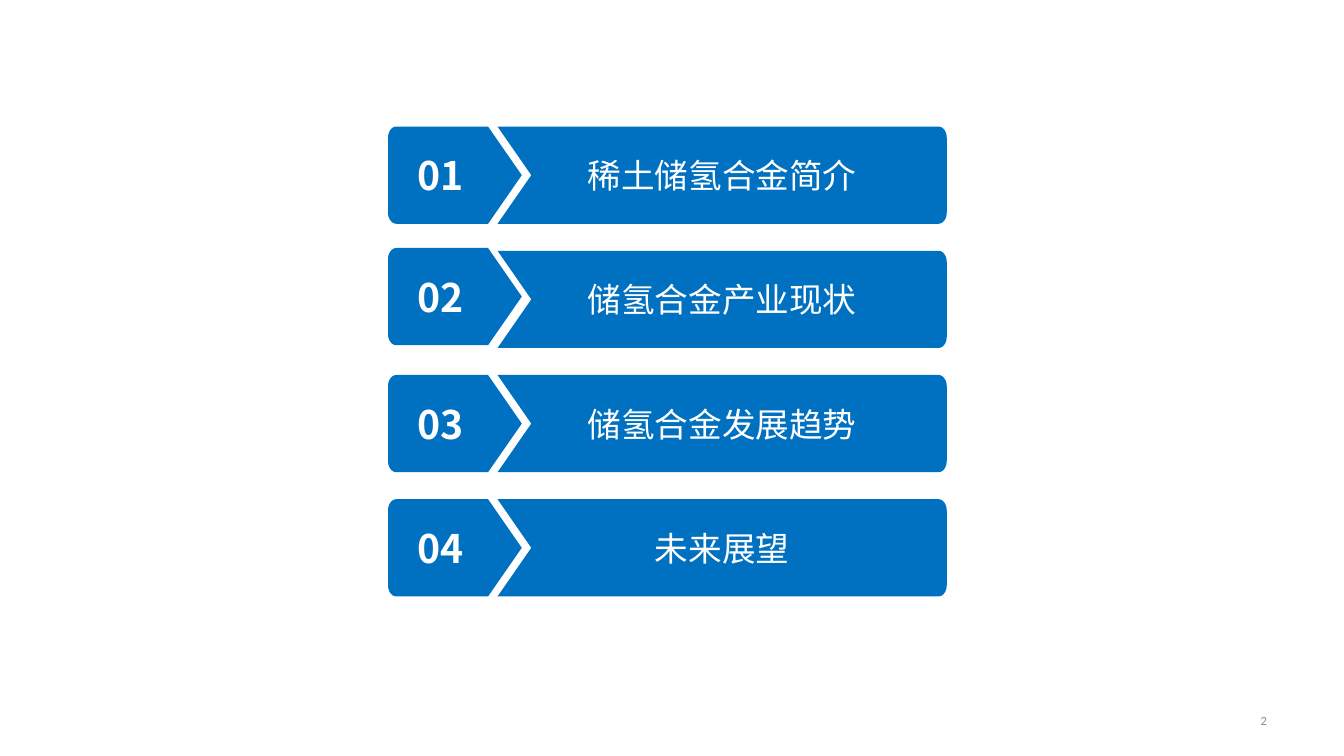
from dataclasses import dataclass
from math import cos, radians, sin

from lxml import etree
from pptx import Presentation
from pptx.dml.color import RGBColor
from pptx.enum.text import MSO_ANCHOR, PP_ALIGN
from pptx.oxml.ns import qn
from pptx.util import Cm, Pt

MIDDLE = MSO_ANCHOR.MIDDLE
CENTER = PP_ALIGN.CENTER
RIGHT = PP_ALIGN.RIGHT


@dataclass(frozen=True)
class Theme:
    """Colours, fonts and type sizes of the agenda."""
    blue: RGBColor = RGBColor(0x00, 0x70, 0xC0)
    white: RGBColor = RGBColor(0xFF, 0xFF, 0xFF)
    grey: RGBColor = RGBColor(0x8C, 0x8C, 0x8C)
    font: str = "Noto Sans CJK SC"
    number_font: str = "Calibri"
    badge_size: int = 28
    title_size: int = 24
    page_size: int = 9


BADGE_LEFT, BADGE_SHOULDER, BADGE_TIP = 9.78, 12.3, 13.15
BANNER_LEFT, BANNER_NOTCH, BANNER_RIGHT = 12.54, 13.39, 23.86
ROW_TOP, ROW_PITCH, ROW_HEIGHT = 3.19, 3.13, 2.45
CORNER_WIDTH, CORNER_HEIGHT = 0.21, 0.28
BADGE_LIFTS = {2: 0.07}
TITLES = ["稀土储氢合金简介", "储氢合金产业现状", "储氢合金发展趋势", "未来展望"]


def corner(center_x, center_y, start):
    """Return the points of a quarter ellipse, clockwise from the start angle."""
    angles = [radians(start + step) for step in range(0, 91, 10)]
    return [(center_x + CORNER_WIDTH * cos(angle), center_y + CORNER_HEIGHT * sin(angle))
            for angle in angles]


class AgendaSlide:
    """Draws agenda elements on one slide in one theme."""

    def __init__(self, slide, theme):
        self.slide = slide
        self.theme = theme

    def add_label(self, shape, text, size, color, font, align, bold=False):
        """Put one run of text, centred vertically, into a shape."""
        frame = shape.text_frame
        frame.word_wrap = True
        frame.vertical_anchor = MIDDLE
        paragraph = frame.paragraphs[0]
        paragraph.alignment = align
        run = paragraph.add_run()
        run.text = text
        run.font.size = Pt(size)
        run.font.bold = bold
        run.font.color.rgb = color
        run.font.name = font
        east_asian = etree.SubElement(run.font._element, qn("a:ea"))
        east_asian.set("typeface", font)

    def outline(self, points, text, size, right_inset, bold=False):
        """Draw a filled outline with a white label."""
        start, *others = [(Cm(x), Cm(y)) for x, y in points]
        builder = self.slide.shapes.build_freeform(*start)
        builder.add_line_segments(others, close=True)
        shape = builder.convert_to_shape()
        shape.shadow.inherit = False
        shape.fill.solid()
        shape.fill.fore_color.rgb = self.theme.blue
        shape.line.fill.background()
        frame = shape.text_frame
        frame.margin_left, frame.margin_right = Cm(0.3), Cm(right_inset)
        frame.margin_top = frame.margin_bottom = Cm(0.15)
        self.add_label(shape, text, size, self.theme.white, self.theme.font, CENTER, bold)

    def banner(self, top, title):
        """Draw a notched title bar with rounded right corners."""
        bottom = top + ROW_HEIGHT
        center_x = BANNER_RIGHT - CORNER_WIDTH
        points = [(BANNER_LEFT, top),
                  *corner(center_x, top + CORNER_HEIGHT, 270),
                  *corner(center_x, bottom - CORNER_HEIGHT, 0),
                  (BANNER_LEFT, bottom),
                  (BANNER_NOTCH, top + ROW_HEIGHT / 2)]
        self.outline(points, title, self.theme.title_size, 0.3)

    def badge(self, top, number):
        """Draw a pointed number badge with rounded left corners."""
        bottom = top + ROW_HEIGHT
        center_x = BADGE_LEFT + CORNER_WIDTH
        points = [*corner(center_x, top + CORNER_HEIGHT, 180),
                  (BADGE_SHOULDER, top),
                  (BADGE_TIP, top + ROW_HEIGHT / 2),
                  (BADGE_SHOULDER, bottom),
                  *corner(center_x, bottom - CORNER_HEIGHT, 90)]
        self.outline(points, f"{number:02d}", self.theme.badge_size, 1, bold=True)

    def page_number(self, text):
        """Place the page number at the lower right."""
        box = self.slide.shapes.add_textbox(Cm(24.28), Cm(17.65), Cm(7.9), Cm(1.02))
        self.add_label(box, text, self.theme.page_size, self.theme.grey,
                       self.theme.number_font, RIGHT)


def main():
    """Build the agenda slide and save it."""
    presentation = Presentation()
    presentation.slide_width = Cm(33.87)
    presentation.slide_height = Cm(19.05)
    slide = presentation.slides.add_slide(presentation.slide_layouts[6])
    agenda = AgendaSlide(slide, Theme())
    agenda.page_number("2")
    for number, title in enumerate(TITLES, start=1):
        top = ROW_TOP + (number - 1) * ROW_PITCH
        agenda.banner(top, title)
        agenda.badge(top - BADGE_LIFTS.get(number, 0), number)
    presentation.save("out.pptx")


if __name__ == "__main__":
    main()
